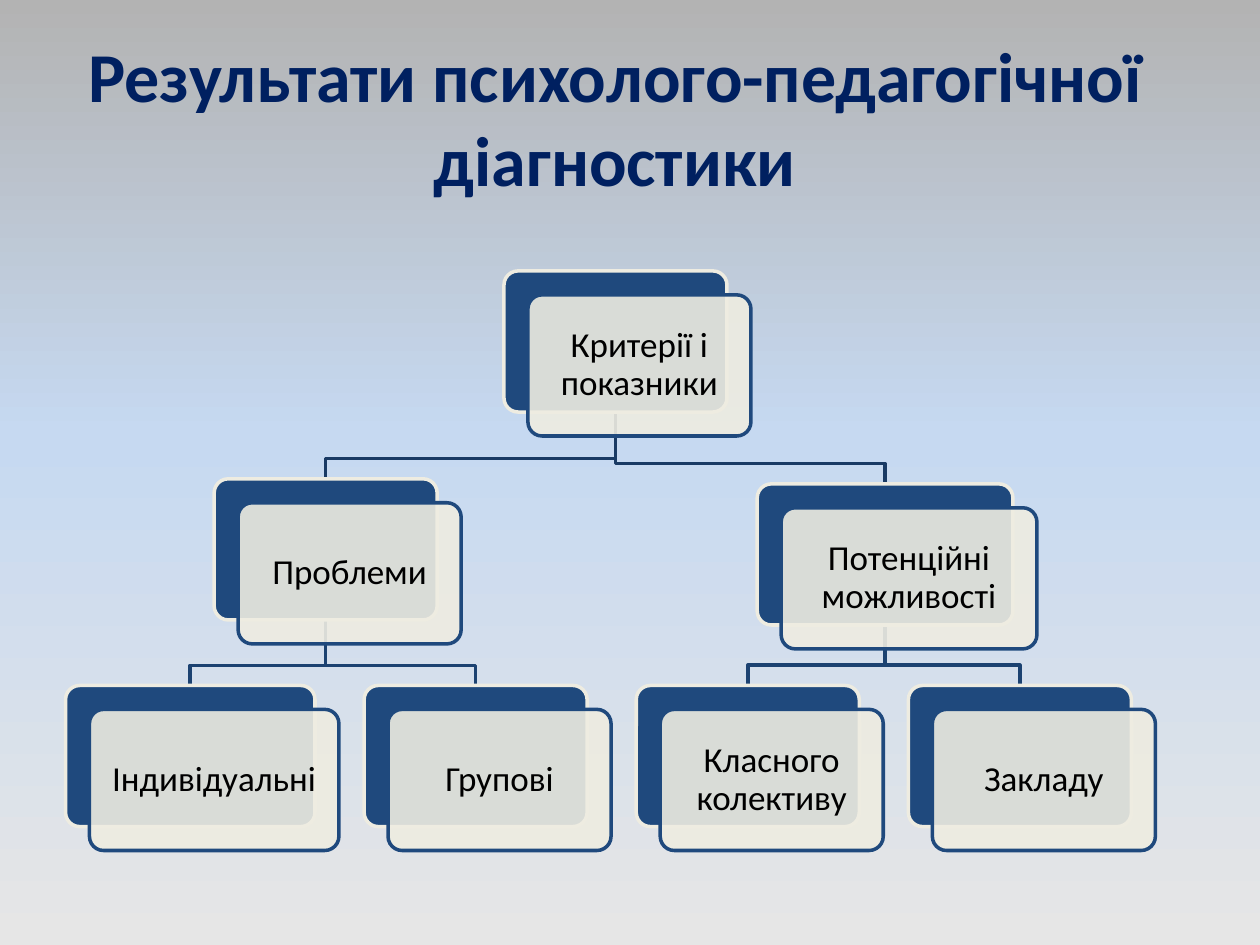
from copy import deepcopy
from lxml.etree import SubElement
from pptx import Presentation
from pptx.dml.color import RGBColor
from pptx.enum.shapes import MSO_SHAPE as Kind
from pptx.enum.text import MSO_ANCHOR as Anchor, MSO_AUTO_SIZE as Auto, PP_ALIGN as Align
from pptx.oxml.ns import qn
from pptx.util import Inches, Pt

NAVY = RGBColor(0x00, 0x20, 0x60)
BLUE = RGBColor(0x1F, 0x49, 0x7D)
CREAM = RGBColor(0xEE, 0xEC, 0xE1)
BLACK = RGBColor(0x00, 0x00, 0x00)
UPPER = RGBColor(0x19, 0x3A, 0x64)
LOWER = RGBColor(0x1C, 0x42, 0x71)
GREY = RGBColor(0xB3, 0xB3, 0xB3)
SKY = RGBColor(0xC6, 0xD9, 0xF1)
PALE = RGBColor(0xE6, 0xE6, 0xE6)

HIGH = 1.12    # card height
SHIFT = 0.19   # offset of the front card
BEND = 0.16    # gap from the bend of a link to the child card


def write(frame, text, spec, **format):
    """Put centred text in a frame, with frame and font settings."""
    for key, val in spec.items():
        setattr(frame, key, val)
    par = frame.paragraphs[0]
    par.alignment = Align.CENTER
    run = par.add_run()
    run.text = text
    run.font.color.rgb = format.pop("color")
    for key, val in format.items():
        setattr(run.font, key, val)
    return par


def card(left, top, wide, fill, line):
    """Add one rounded card."""
    box = slide.shapes.add_shape(Kind.ROUNDED_RECTANGLE, Inches(left), Inches(top),
                                 Inches(wide), Inches(HIGH))
    box.adjustments[0] = 0.1
    box.shadow.inherit = False
    box.fill.solid()
    box.fill.fore_color.rgb = fill
    box.line.color.rgb = line
    box.line.width = Pt(2)
    return box


deck = Presentation()
deck.slide_width, deck.slide_height = Inches(10), Inches(7.5)
slide = deck.slides.add_slide(deck.slide_layouts[5])

# Background gradient, top to bottom
fill = slide.background.fill
fill.gradient()
fill.gradient_angle = 270
stops = next(slide.element.iter(qn("a:gsLst")))
stops.append(deepcopy(stops[0]))
for stop, (pos, color) in zip(fill.gradient_stops, [(0, GREY), (0.46, SKY), (1, PALE)]):
    stop.position = pos
    stop.color.rgb = color

# Title
title = slide.shapes.title
title.left, title.top = Inches(0.59), Inches(0.21)
title.width, title.height = Inches(8.58), Inches(1.45)
write(title.text_frame, "Результати психолого-педагогічної діагностики",
      {"vertical_anchor": Anchor.TOP, "auto_size": Auto.NONE, "word_wrap": True},
      name="Calibri", size=Pt(40), bold=True, color=NAVY)

# Tree: name, (text, left, top, width, parent)
ROW = 5.44
tree = {
    "root": ("Критерії і показники", 4.0, 2.15, 1.77, None),
    "needs": ("Проблеми", 1.7, 3.8, 1.77, "root"),
    "single": ("Індивідуальні", 0.52, ROW, 1.98, "needs"),
    "group": ("Групові", 2.89, ROW, 1.77, "needs"),
    "means": ("Потенційні можливості", 6.01, 3.84, 2.03, "root"),
    "class": ("Класного колективу", 5.05, ROW, 1.77, "means"),
    "school": ("Закладу", 7.21, ROW, 1.77, "means"),
}

# Links from the foot of the parent to the top of the child
for text, left, top, wide, above in tree.values():
    if above is None:
        continue
    _, x, y, span, _ = tree[above]
    start, end, turn = x + span / 2, left + wide / 2, top - BEND
    pen = slide.shapes.build_freeform(Inches(start), Inches(y + HIGH), scale=1.0)
    pen.add_line_segments([(Inches(start), Inches(turn)), (Inches(end), Inches(turn)),
                           (Inches(end), Inches(top))], close=False)
    link = pen.convert_to_shape()
    link.shadow.inherit = False
    link.fill.background()
    link.line.color.rgb = UPPER if above == "root" else LOWER
    link.line.width = Pt(2)

# Cards: a solid one behind, a see-through one with the text in front
inset = {f"margin_{side}": Inches(0.08) for side in ("left", "top", "right", "bottom")}
for text, left, top, wide, _ in tree.values():
    card(left, top, wide, BLUE, CREAM)
    front = card(left + SHIFT, top + SHIFT, wide, CREAM, BLUE)
    tint = front.element.spPr.find(qn("a:solidFill"))[0]
    SubElement(tint, qn("a:alpha"), val="90000")
    par = write(front.text_frame, text,
                {"vertical_anchor": Anchor.MIDDLE, "word_wrap": True, **inset},
                name="Calibri", size=Pt(20), color=BLACK)
    par.line_spacing = 0.9
    par.space_after = Pt(7)

deck.save("out.pptx")
